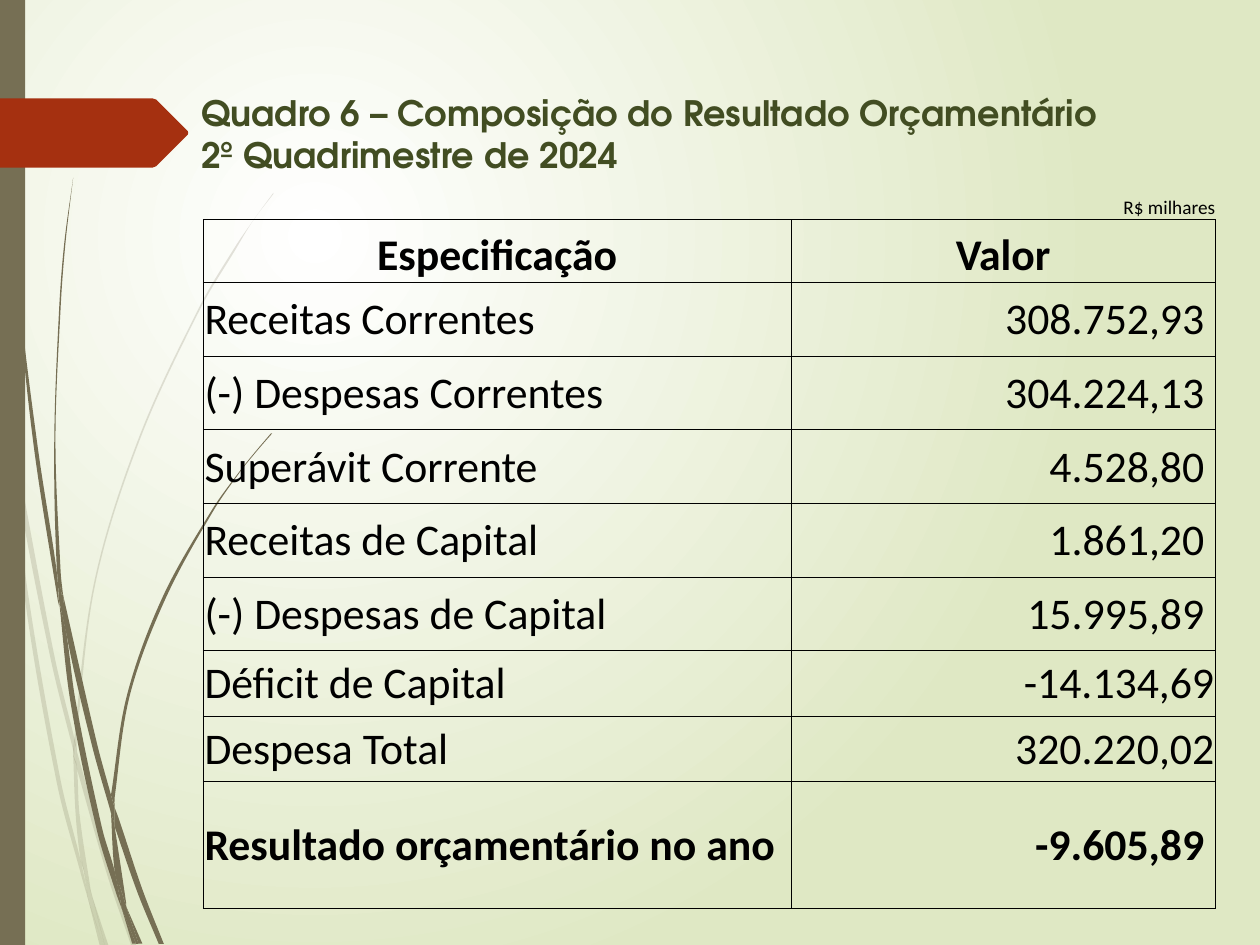
from math import dist

from lxml import etree
from pptx import Presentation
from pptx.dml.color import RGBColor
from pptx.enum.shapes import MSO_SHAPE
from pptx.enum.text import MSO_ANCHOR, PP_ALIGN
from pptx.oxml.ns import qn
from pptx.util import Pt

LEFT, CENTER, RIGHT = PP_ALIGN.LEFT, PP_ALIGN.CENTER, PP_ALIGN.RIGHT
TOP, MIDDLE, BOTTOM = MSO_ANCHOR.TOP, MSO_ANCHOR.MIDDLE, MSO_ANCHOR.BOTTOM
RECTANGLE = MSO_SHAPE.RECTANGLE

THEME = {
    "white": "FFFFFF", "green": "DFE8C4", "title": "424D22", "text": "000000",
    "stem": "766F54", "tag": "A53010",
    "title_font": "TeX Gyre Adventor", "table_font": "Calibri",
    "title_size": 20, "table_size": 25, "unit_size": 11,
    "border": 0.5, "pale_alpha": 20,
}
NO_TABLE_STYLE = "{2D5ABB26-0587-4C30-8999-92F81FD0307C}"

TITLE = "Quadro 6 – Composição do Resultado Orçamentário\v2º Quadrimestre de 2024"
UNIT = "R$ milhares"
HEADER = ("Especificação", "Valor")
# label, value, row height, gap to the right of the value
ROWS = [
    ("Receitas Correntes", "308.752,93", 42.1, 6.4),
    ("(-) Despesas Correntes", "304.224,13", 42.1, 6.4),
    ("Superávit Corrente", "4.528,80", 42.1, 6.4),
    ("Receitas de Capital", "1.861,20", 42.1, 6.4),
    ("(-) Despesas de Capital", "15.995,89", 42.1, 6.4),
    ("Déficit de Capital", "-14.134,69", 37.3, 0.7),
    ("Despesa Total", "320.220,02", 37.3, 0.7),
    ("Resultado orçamentário no ano", "-9.605,89", 72.8, 6.4),
]
COLUMN_WIDTHS = (335.8, 90, 152.5)
UNIT_HEIGHT, HEADER_HEIGHT = 25.2, 36

# Each blade of grass is a list of curved edges, each edge a list of points.
PALE_BLADES = [
    [[(0, 203), (4.3, 231.8), (5.8, 252)], [(5.8, 252), (5, 247.7), (0, 215.3)]],
    [[(7.2, 248.4), (8.6, 270.7), (28.8, 375.8), (42.5, 431.3)],
     [(42.5, 421.9), (31, 374.4), (7.2, 248.4)]],
    [[(43.9, 439.2), (61.2, 499.7), (74.9, 540)],
     [(77.8, 540), (63.4, 498.2), (46.1, 437), (43.9, 429.1)]],
    [[(52.6, 511.9), (59.8, 540)], [(61.9, 540), (52.6, 511.9)]],
    [[(5.8, 252), (13.7, 338.4), (32.4, 447.1), (46.1, 499), (50.4, 514.1)],
     [(50.4, 514.1), (49.7, 509), (46.1, 491.8), (34.6, 445.7), (15.8, 337.7),
      (8.6, 270.7), (5.8, 252)]],
    [[(41.8, 431.3), (43.2, 465.1), (46.1, 491.8), (48.2, 498.2), (52.6, 511.9)],
     [(52.6, 511.9), (51.8, 508.3), (45.4, 465.1), (43.9, 437.8), (41.8, 431.3)]],
    [[(43.9, 429.1), (43.9, 420.5), (54.7, 332.6), (79.9, 251.3), (114.5, 176.4),
      (134.6, 142.6), (144.7, 126), (156.2, 110.9)],
     [(156.2, 110.2), (144.7, 126), (133.9, 141.8), (113.8, 175.7), (79.2, 250.6),
      (54, 331.9), (42.5, 421.9), (43.9, 429.1)]],
    [[(50.4, 514.1), (56.9, 540)], [(59, 540), (50.4, 514.1)]],
    [[(43.9, 439.2), (43.9, 429.1), (42.5, 421.9)],
     [(42.5, 421.9), (41.8, 431.3), (43.9, 437.8)]],
    [[(46.8, 491.8), (49.7, 509), (50.4, 514.1), (59, 540)],
     [(59.8, 540), (52.6, 511.9), (48.2, 498.2), (46.8, 491.8)]],
]
DARK_BLADES = [
    [[(2.2, 0), (2.9, 34.6), (4.3, 78.5), (10.8, 167), (21.6, 255.6), (32.4, 326.2),
      (33.8, 346.3)],
     [(33.8, 346.3), (33.1, 343.4), (19.4, 255.6), (10.1, 167.8), (3.6, 79.2),
      (2.2, 34.6), (1.4, 0)]],
    [[(36, 339.8), (38.2, 363.6), (52.6, 426.2), (63.4, 464.4)],
     [(63.4, 454.3), (55.4, 424.8), (36, 339.8)]],
    [[(65.5, 472.3), (78.5, 509.8), (90.7, 539.3)],
     [(93.6, 539.3), (81.4, 508.3), (67.7, 467.3), (65.5, 461.5)]],
    [[(33.8, 343.4), (40.3, 401), (55.4, 474.5), (66.2, 509.8), (69.8, 519.8)],
     [(69.8, 519.8), (69.1, 516.2), (65.5, 497.5), (58.3, 473), (43.2, 400.3),
      (38.2, 363.6), (33.8, 343.4)]],
    [[(36, 339.8), (34.6, 326.2), (31.7, 251.3), (34.6, 176.4), (37.4, 139),
      (41.8, 101.5)],
     [(41.8, 101.5), (36.7, 139), (33.8, 176.4), (31, 251.3), (32.4, 323.3),
      (35.3, 339.8)]],
    [[(72, 517.7), (79.2, 539.3)], [(81.4, 539.3), (72, 517.7)]],
    [[(33.8, 343.4), (38.2, 363.6)], [(38.2, 363.6), (36, 339.8)],
     [(35.3, 339.8), (32.4, 323.3)]],
    [[(65.5, 461.5), (65.5, 455.8), (74.2, 397.4), (94.3, 342.7), (121.7, 292.3),
      (137.5, 269.3), (146.2, 258.5), (155.5, 247.7)],
     [(154.8, 247.7), (146.2, 257.8), (137.5, 268.6), (121, 291.6), (92.9, 341.3),
      (72.7, 396.7), (63.4, 454.3)]],
    [[(69.8, 519.8), (75.6, 539.3)], [(77.8, 539.3), (69.8, 519.8)]],
    [[(63.4, 464.4), (65.5, 497.5), (69.1, 508.3), (72, 517.7)],
     [(72, 517.7), (72, 515.5), (65.5, 472.3), (64.8, 468.7), (63.4, 464.4)]],
    [[(63.4, 464.4), (64.8, 468.7), (65.5, 472.3)], [(65.5, 461.5), (63.4, 454.3)]],
    [[(65.5, 497.5), (69.1, 516.2), (69.8, 519.8), (77.8, 539.3)],
     [(79.2, 539.3), (72, 517.7), (69.1, 508.3), (65.5, 497.5)]],
]
TAG = [(0, 56.2), (87.1, 56.2), (89.3, 56.9), (107.3, 74.9), (107.6, 76),
       (107.3, 77), (89.3, 95), (87.1, 95.8), (0, 95.8)]


def rgb(name):
    return RGBColor.from_string(THEME[name])


def edge_controls(edge):
    """Two Bezier control points per step, so that the edge bends smoothly."""
    last = len(edge) - 1
    slopes = []
    for i in range(last + 1):
        a, b, c = edge[max(i - 1, 0)], edge[i], edge[min(i + 1, last)]
        length = dist(a, b) + dist(b, c)
        slopes.append([(c[k] - a[k]) / length for k in (0, 1)])
    controls = []
    for (p, q), (m, n) in zip(zip(edge, edge[1:]), zip(slopes, slopes[1:])):
        third = dist(p, q) / 3
        controls.append(([p[k] + third * m[k] for k in (0, 1)],
                         [q[k] - third * n[k] for k in (0, 1)]))
    return controls


def paint(sp, color, alpha=100):
    sp.shadow.inherit = False
    sp.fill.solid()
    sp.fill.fore_color.rgb = rgb(color)
    sp.line.fill.background()
    if alpha < 100:
        clr = sp._element.spPr.find(qn("a:solidFill"))[0]
        etree.SubElement(clr, qn("a:alpha"), val=str(alpha * 1000))


def add_outline(s, points, color, alpha=100):
    start, *rest = [(Pt(x), Pt(y)) for x, y in points]
    builder = s.shapes.build_freeform(*start)
    builder.add_line_segments(rest)
    sp = builder.convert_to_shape()
    paint(sp, color, alpha)
    return sp


def add_blade(s, edges, alpha):
    """A freeform whose steps within an edge are curves, and lines between edges."""
    sp = add_outline(s, [p for edge in edges for p in edge], "stem", alpha)
    steps = []
    for edge in edges:
        steps += [None] + edge_controls(edge)
    lines = list(sp._element.iter(qn("a:lnTo")))
    for line, controls in zip(lines, steps[1:]):
        if controls:
            line.tag = qn("a:cubicBezTo")
            for i, (x, y) in enumerate(controls):
                line.insert(i, etree.Element(qn("a:pt"), x=str(Pt(x) - sp.left),
                                             y=str(Pt(y) - sp.top)))


def add_background(s):
    fill = s.background.fill
    fill.gradient()
    for stop, color in zip(fill.gradient_stops, ("white", "green")):
        stop.color.rgb = rgb(color)
    grad = s._element.find(".//" + qn("a:gradFill"))
    grad.remove(grad.find(qn("a:lin")))
    circle = etree.SubElement(grad, qn("a:path"), path="circle")
    etree.SubElement(circle, qn("a:fillToRect"), l="50000", t="50000",
                     r="100000", b="100000")


def add_decoration(s):
    for blades, alpha in ((PALE_BLADES, THEME["pale_alpha"]), (DARK_BLADES, 100)):
        for blade in blades:
            add_blade(s, blade, alpha)
    paint(s.shapes.add_shape(RECTANGLE, 0, 0, Pt(14.4), Pt(540)), "stem")
    add_outline(s, TAG, "tag")


def style_runs(p, font, size, color, bold):
    for r in p.runs:
        r.font.name, r.font.size, r.font.bold = font, Pt(size), bold
        r.font.color.rgb = rgb(color)


def add_title(s):
    tf = s.shapes.add_textbox(Pt(108), Pt(48.8), Pt(612), Pt(24)).text_frame
    tf.word_wrap, tf.vertical_anchor = True, TOP
    tf.text = TITLE
    style_runs(tf.paragraphs[0], THEME["title_font"], THEME["title_size"], "title", True)


def set_borders(cell, sides):
    tc_pr = cell._tc.get_or_add_tcPr()
    for i, side in enumerate(sides):
        ln = etree.Element(qn("a:ln" + side), w=str(Pt(THEME["border"])))
        fill = etree.SubElement(ln, qn("a:solidFill"))
        etree.SubElement(fill, qn("a:srgbClr"), val=THEME["text"])
        tc_pr.insert(i, ln)


def fill_cell(cell, text, align, anchor, size, bold=False, inset=0, right=0):
    cell.margin_left = cell.margin_top = Pt(inset)
    cell.margin_right, cell.margin_bottom = Pt(right), 0
    cell.vertical_anchor = anchor
    cell.text = text
    p = cell.text_frame.paragraphs[0]
    p.alignment, p.font.size = align, Pt(size)
    style_runs(p, THEME["table_font"], size, "text", bold)


def add_results_table(s):
    heights = [UNIT_HEIGHT, HEADER_HEIGHT] + [row[2] for row in ROWS]
    frame = s.shapes.add_table(len(heights), len(COLUMN_WIDTHS), Pt(116.2), Pt(100.2),
                               Pt(sum(COLUMN_WIDTHS)), Pt(sum(heights)))
    table = frame.table
    table.first_row = table.horz_banding = False
    table._tbl.tblPr.find(qn("a:tableStyleId")).text = NO_TABLE_STYLE
    for column, width in zip(table.columns, COLUMN_WIDTHS):
        column.width = Pt(width)
    for i, height in enumerate(heights):
        table.rows[i].height = Pt(height)
        for cell in table.rows[i].cells:
            cell.fill.background()
            set_borders(cell, "LRTB" if i else "B")
        if i:
            table.cell(i, 1).merge(table.cell(i, 2))

    size = THEME["table_size"]
    for j, text in enumerate(("", "", UNIT)):
        fill_cell(table.cell(0, j), text, RIGHT, BOTTOM, THEME["unit_size"])
    for j, text in enumerate(HEADER):
        fill_cell(table.cell(1, j), text, CENTER, BOTTOM, size, True)
    for i, (label, value, _, gap) in enumerate(ROWS, start=2):
        bold = i == len(heights) - 1
        fill_cell(table.cell(i, 0), label, LEFT, MIDDLE, size, bold, 0.7, 0.7)
        fill_cell(table.cell(i, 1), value, RIGHT, MIDDLE, size, bold, 0.7, gap)


prs = Presentation()
prs.slide_width, prs.slide_height = Pt(720), Pt(540)
s = prs.slides.add_slide(prs.slide_layouts[6])
add_background(s)
add_decoration(s)
add_title(s)
add_results_table(s)
prs.save("out.pptx")
